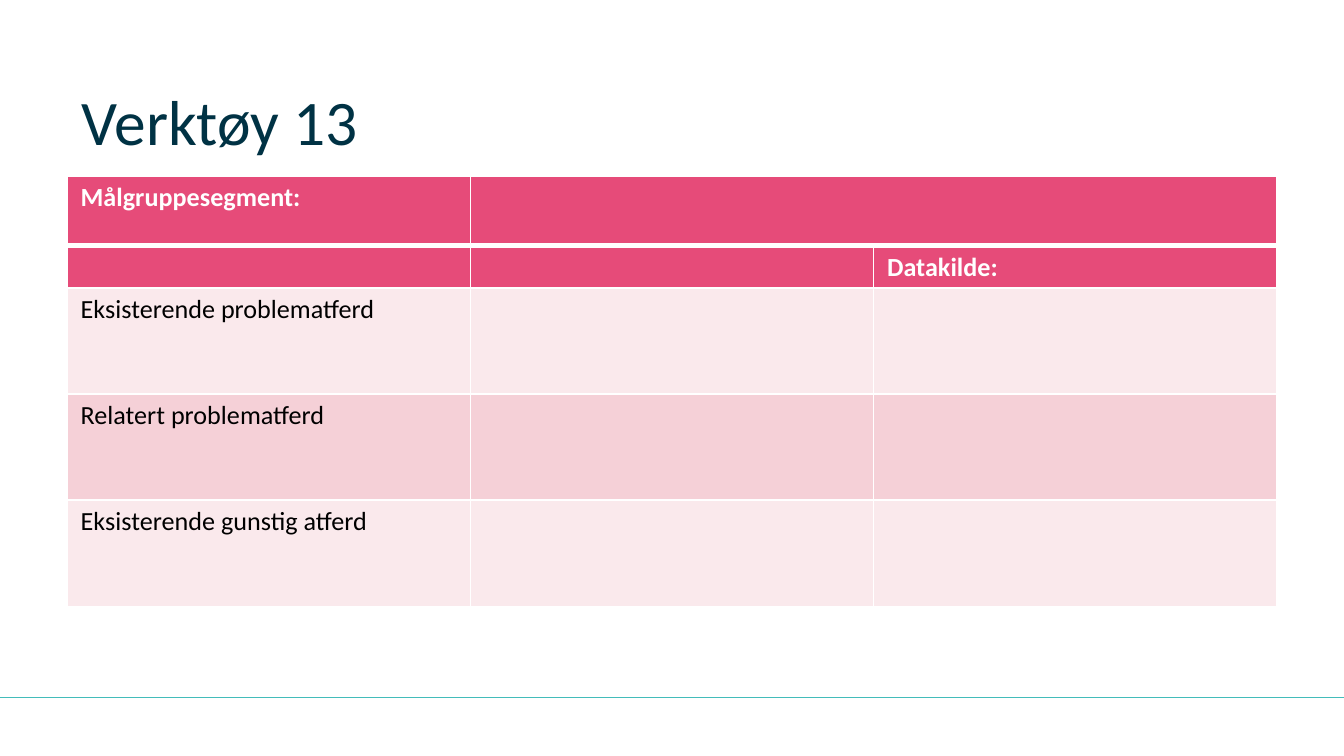
from lxml import etree
from pptx import Presentation
from pptx.dml.color import RGBColor
from pptx.enum.shapes import MSO_CONNECTOR
from pptx.enum.text import MSO_ANCHOR
from pptx.oxml.ns import qn
from pptx.util import Inches, Pt

STRAIGHT = MSO_CONNECTOR.STRAIGHT
BOTTOM = MSO_ANCHOR.BOTTOM
FONT = "Calibri"
WHITE, BLACK, NAVY, TEAL = "FFFFFF", "000000", "003244", "43BCBA"
PINK, PALE, ROSE = "E64B79", "FAE9EC", "F5D0D7"
TABLE_ROWS = [
    (["Målgruppesegment:", "", ""], 0.52, PINK),
    (["", "", "Datakilde:"], 0.31, PINK),
    (["Eksisterende problematferd", "", ""], 0.79, PALE),
    (["Relatert problematferd", "", ""], 0.79, ROSE),
    (["Eksisterende gunstig atferd", "", ""], 0.79, PALE),
]


def color(value):
    """Return the colour for a hex string."""
    return RGBColor.from_string(value)


def add_run(paragraph, text, size, value, bold=False):
    """Add one formatted run to a paragraph."""
    run = paragraph.add_run()
    run.text = text
    run.font.name = FONT
    run.font.size = Pt(size)
    run.font.bold = bold
    run.font.color.rgb = color(value)


def add_title(slide, left, top, width, height, text):
    """Place the title at the bottom of its box."""
    shape = slide.shapes.add_textbox(Inches(left), Inches(top), Inches(width), Inches(height))
    frame = shape.text_frame
    frame.word_wrap = True
    frame.vertical_anchor = BOTTOM
    add_run(frame.paragraphs[0], text, 34, NAVY)


def set_borders(cell, bottom_width):
    """Draw white lines on the four sides of a cell."""
    properties = cell._tc.get_or_add_tcPr()
    widths = {"a:lnL": 1, "a:lnR": 1, "a:lnT": 1, "a:lnB": bottom_width}
    for index, (tag, width) in enumerate(widths.items()):
        line = etree.Element(qn(tag), w=str(Pt(width)))
        fill = etree.SubElement(line, qn("a:solidFill"))
        etree.SubElement(fill, qn("a:srgbClr"), val=WHITE)
        properties.insert(index, line)


def fill_cell(cell, text, fill, bottom_width):
    """Set the text, fill and borders of a cell."""
    cell.margin_top = cell.margin_bottom = Inches(0.04)
    cell.fill.solid()
    cell.fill.fore_color.rgb = color(fill)
    set_borders(cell, bottom_width)
    paragraph = cell.text_frame.paragraphs[0]
    if text:
        heading = fill == PINK
        add_run(paragraph, text, 14, WHITE if heading else BLACK, heading)
    else:
        etree.SubElement(paragraph._p, qn("a:endParaRPr"), sz="1400")


def add_segment_table(slide, left, top, width, rows):
    """Place the table of target group behaviours."""
    columns = len(rows[0][0])
    height = sum(row_height for _, row_height, _ in rows)
    frame = slide.shapes.add_table(
        len(rows), columns, Inches(left), Inches(top), Inches(width), Inches(height))
    table = frame.table
    for column in table.columns:
        column.width = Inches(width / columns)
    for row_index, (texts, row_height, fill) in enumerate(rows):
        table.rows[row_index].height = Inches(row_height)
        for column_index, text in enumerate(texts):
            cell = table.cell(row_index, column_index)
            fill_cell(cell, text, fill, 3 if row_index == 0 else 1)
    table.cell(0, 1).merge(table.cell(0, 2))


def add_footer_line(slide, left, top, width):
    """Draw the thin line above the footer."""
    line = slide.shapes.add_connector(
        STRAIGHT, Inches(left), Inches(top), Inches(left + width), Inches(top))
    line.line.color.rgb = color(TEAL)
    line.line.width = Pt(1)
    etree.SubElement(line._element.spPr, qn("a:effectLst"))


def main():
    """Build and save the slide."""
    presentation = Presentation()
    presentation.slide_width = Inches(10)
    presentation.slide_height = Inches(10 * 9 / 16)
    slide = presentation.slides.add_slide(presentation.slide_layouts[6])
    add_footer_line(slide, 0, 5.19, 10)
    add_title(slide, 0.51, 0.55, 8.98, 0.68, "Verktøy 13")
    add_segment_table(slide, 0.5, 1.31, 9, TABLE_ROWS)
    presentation.save("out.pptx")


if __name__ == "__main__":
    main()
